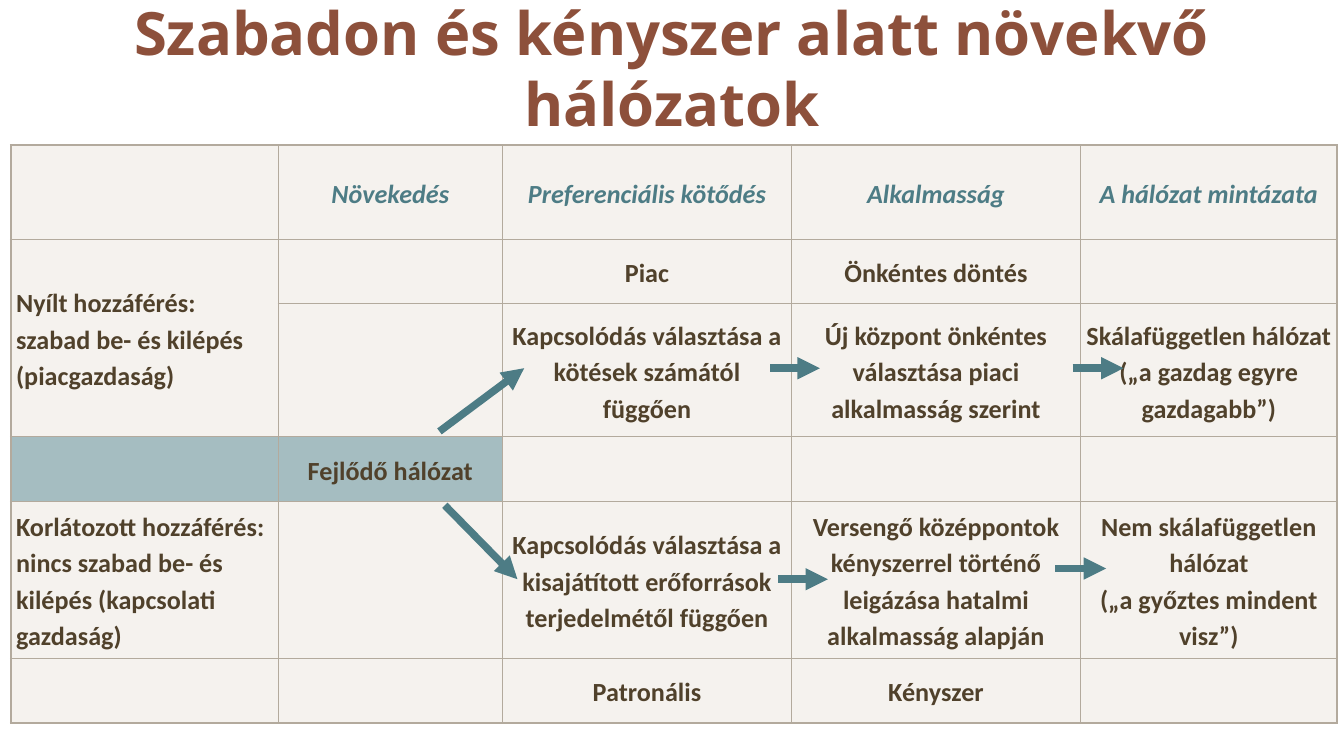
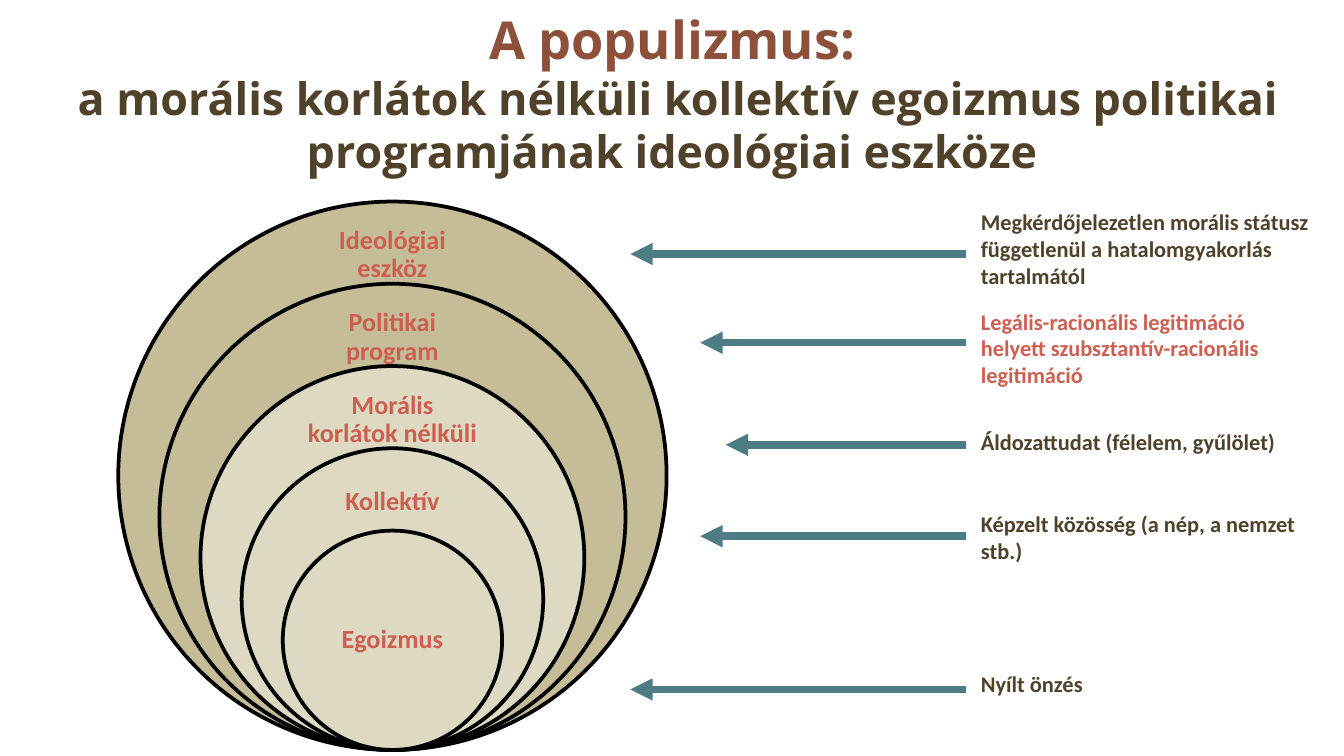
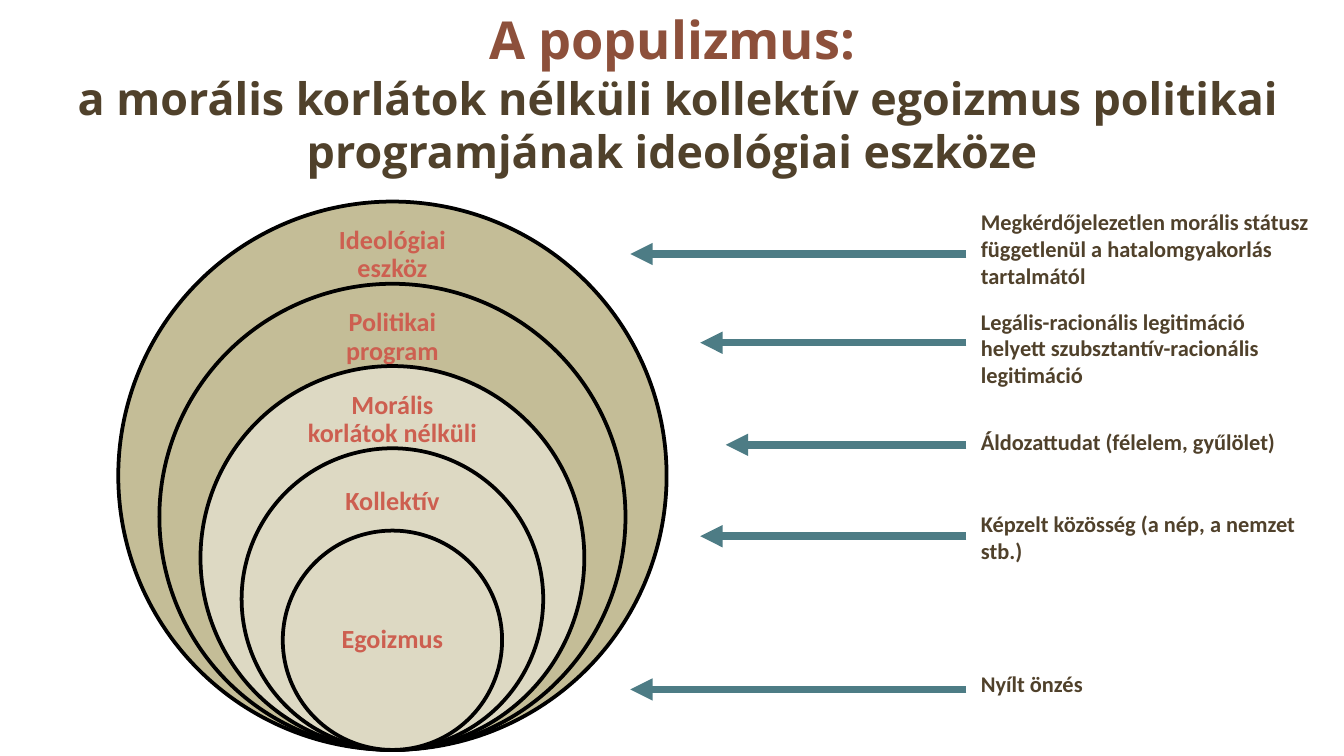
import pptx
import pptx.dml.color
import pptx.enum.shapes
import pptx.enum.text
import pptx.oxml
import pptx.oxml.ns
import pptx.util
from pptx.util import Inches

# Shared look
RUST, BROWN, TEAL, CORAL = "8D503B", "50412B", "4D7C85", "CD5F50"
SAND, TAUPE, KHAKI, CREAM, BLACK = "EFEAE4", "B3AA9D", "C4BD97", "DDD9C3", "000000"
TITLE_FONT, BODY_FONT = "Open Sans", "Calibri"
CENTER = pptx.enum.text.PP_ALIGN.CENTER
LEFT = pptx.enum.text.PP_ALIGN.LEFT
MIDDLE = pptx.enum.text.MSO_ANCHOR.MIDDLE
TOP = pptx.enum.text.MSO_ANCHOR.TOP

# Networks table
COLUMN_WIDTHS = [1.99, 1.67, 2.15, 2.15, 1.91]
ROW_HEIGHTS = [0.7, 0.48, 0.99, 0.48, 0.99, 0.48]
NETWORKS = [
    ["", "Növekedés", "Preferenciális kötődés", "Alkalmasság", "A hálózat mintázata"],
    ["Nyílt hozzáférés: szabad be- és kilépés (piacgazdaság)", "", "Piac",
     "Önkéntes döntés", ""],
    ["", "", "Kapcsolódás választása a kötések számától függően",
     "Új központ önkéntes választása piaci alkalmasság szerint",
     "Skálafüggetlen hálózat\n(„a gazdag egyre gazdagabb”)"],
    ["", "Fejlődő hálózat", "", "", ""],
    ["Korlátozott hozzáférés: nincs szabad be- és kilépés (kapcsolati gazdaság)", "",
     "Kapcsolódás választása a kisajátított erőforrások terjedelmétől függően",
     "Versengő középpontok kényszerrel történő leigázása hatalmi alkalmasság alapján",
     "Nem skálafüggetlen hálózat\n(„a győztes mindent visz”)"],
    ["", "", "Patronális", "Kényszer", ""],
]
# Arrow ends, measured from the corner of the table
NETWORK_ARROWS = [
    ((3.19, 2.13), (3.82, 1.66)), ((3.23, 2.68), (3.77, 3.23)),
    ((5.65, 1.66), (6.02, 1.66)), ((5.71, 3.23), (6.08, 3.23)),
    ((7.9, 1.66), (8.28, 1.66)), ((7.77, 3.15), (8.15, 3.15)),
]

# Populism: rings as (label, label width, fill), outermost first
RINGS = [
    ("Ideológiai eszköz", 1.53, KHAKI),
    ("Politikai program", 1.5, KHAKI),
    ("Morális korlátok nélküli", 1.48, CREAM),
    ("Kollektív", 1.21, CREAM),
    ("Egoizmus", 1.15, CREAM),
]
# Callouts as (text, top, height, arrow height, arrow tip)
CALLOUTS = [
    ("Megkérdőjelezetlen morális státusz függetlenül a hatalomgyakorlás tartalmától",
     0, 0.66, 0.39, 0),
    ("Legális-racionális legitimáció helyett szubsztantív-racionális legitimáció",
     0.74, 0.71, 1.05, 0.52),
    ("Áldozattudat (félelem, gyűlölet)", 1.64, 0.37, 1.81, 0.71),
    ("Képzelt közösség (a nép, a nemzet stb.)", 2.25, 0.53, 2.49, 0.52),
    ("Nyílt önzés", 3.44, 0.31, 3.63, 0),
]


def rgb(color):
    return pptx.dml.color.RGBColor.from_string(color)


def set_font(font, size, color, name=BODY_FONT, italic=False):
    font.name, font.size, font.bold = name, pptx.util.Pt(size), True
    font.italic = italic
    font.color.rgb = rgb(color)


def xml(tag, **attributes):
    element = pptx.oxml.parse_xml(f"<{tag} {pptx.oxml.ns.nsdecls('a')}/>")
    for key, value in attributes.items():
        element.set(key, str(value))
    return element


def add_title(slide, height, parts):
    """Each part is (text, size, color) and stands on a line of its own."""
    title = slide.shapes.title
    title.left, title.top = Inches(0.12), Inches(0)
    title.width, title.height = Inches(9.76), Inches(height)
    frame = title.text_frame
    frame.auto_size = pptx.enum.text.MSO_AUTO_SIZE.NONE
    frame.vertical_anchor = MIDDLE
    paragraph = frame.paragraphs[0]
    paragraph.alignment = CENTER
    for index, (text, size, color) in enumerate(parts):
        if index:
            paragraph.add_line_break()
            paragraph.space_after = pptx.util.Pt(24)
        run = paragraph.add_run()
        run.text = text
        set_font(run.font, size, color, TITLE_FONT)


def add_arrow(shapes, start, end):
    arrow = shapes.add_connector(pptx.enum.shapes.MSO_CONNECTOR.STRAIGHT,
                                 *(Inches(value) for value in (*start, *end)))
    arrow.line.color.rgb = rgb(TEAL)
    arrow.line.width = pptx.util.Pt(4)
    arrow.line._get_or_add_ln().append(xml("a:tailEnd", type="triangle"))
    arrow._element.spPr.append(xml("a:effectLst"))


def add_label(shapes, box, text, size, color, align=LEFT, anchor=TOP, inset=None,
              spacing=None):
    label = shapes.add_textbox(*(Inches(value) for value in box))
    frame = label.text_frame
    frame.word_wrap, frame.vertical_anchor = True, anchor
    if inset is not None:
        frame.margin_left = frame.margin_right = Inches(inset)
        frame.margin_top = frame.margin_bottom = Inches(inset)
    frame.text = text
    paragraph = frame.paragraphs[0]
    paragraph.alignment, paragraph.line_spacing = align, spacing
    set_font(paragraph.font, size, color)


def style_cell(cell, row, column):
    # Borders are heavier along the outside of the table
    outer = {"L": column == 0, "R": column == len(COLUMN_WIDTHS) - 1,
             "T": row == 0, "B": row == len(ROW_HEIGHTS) - 1}
    properties = cell._tc.get_or_add_tcPr()
    for side, heavy in outer.items():
        border = xml(f"a:ln{side}", w=pptx.util.Pt(1 if heavy else 0.5))
        fill = xml("a:solidFill")
        fill.append(xml("a:srgbClr", val=TAUPE))
        border.append(fill)
        properties.append(border)
    # The start of the process is tinted
    color, opacity = (TEAL, 50) if row == 3 and column < 2 else (SAND, 60)
    cell.fill.solid()
    cell.fill.fore_color.rgb = rgb(color)
    tint = properties.find(pptx.oxml.ns.qn("a:solidFill"))[0]
    tint.append(xml("a:alpha", val=opacity * 1000))
    # Text
    cell.vertical_anchor = MIDDLE
    cell.margin_left = cell.margin_right = Inches(0.04)
    cell.margin_top = cell.margin_bottom = Inches(0.04)
    if NETWORKS[row][column]:
        cell.text = NETWORKS[row][column]
        for paragraph in cell.text_frame.paragraphs:
            paragraph.alignment = CENTER if column else LEFT
            paragraph.line_spacing = 1.15
            set_font(paragraph.font, 14, BROWN if row else TEAL, italic=row == 0)


def add_networks(slide, left, top, width, height):
    frame = slide.shapes.add_table(
        len(ROW_HEIGHTS), len(COLUMN_WIDTHS), Inches(left), Inches(top),
        Inches(width), Inches(height))
    table = frame.table
    table.first_row = table.horz_banding = False
    for column, column_width in zip(table.columns, COLUMN_WIDTHS):
        column.width = Inches(column_width)
    for row, row_height in zip(table.rows, ROW_HEIGHTS):
        row.height = Inches(row_height)
    frame.width, frame.height = Inches(width), Inches(height)
    for row in range(len(ROW_HEIGHTS)):
        for column in range(len(COLUMN_WIDTHS)):
            style_cell(table.cell(row, column), row, column)
    table.cell(1, 0).merge(table.cell(2, 0))
    for ends in NETWORK_ARROWS:
        add_arrow(slide.shapes, *((left + x, top + y) for x, y in ends))


def add_callouts(slide, left, top, highlighted):
    shapes = slide.shapes.add_group_shape().shapes
    for _, _, _, arrow_y, tip in CALLOUTS:
        add_arrow(shapes, (left + 2.5, top + arrow_y), (left + tip, top + arrow_y))
    for index, (text, offset, height, _, _) in enumerate(CALLOUTS):
        add_label(shapes, (left + 2.51, top + offset, 2.68, height), text, 12,
                  CORAL if index == highlighted else BROWN)


def add_rings(slide, left, top, size):
    """Circles that shrink by equal steps and touch at the bottom."""
    shapes = slide.shapes.add_group_shape().shapes
    middle, bottom = left + size / 2, top + size
    for index, (text, width, color) in enumerate(RINGS):
        diameter = size * (1 - 0.15 * index)
        ring_top = bottom - diameter
        ring = shapes.add_shape(
            pptx.enum.shapes.MSO_SHAPE.OVAL, Inches(middle - diameter / 2),
            Inches(ring_top), Inches(diameter), Inches(diameter))
        ring.shadow.inherit = False
        ring.fill.solid()
        ring.fill.fore_color.rgb = rgb(color)
        ring.line.color.rgb = rgb(BLACK)
        ring.line.width = pptx.util.Pt(2)
        innermost = index == len(RINGS) - 1
        offset, height = (diameter / 4, diameter / 2) if innermost else (0.2, 0.4)
        add_label(shapes, (middle - width / 2, ring_top + offset, width, height),
                  text, 14, CORAL, CENTER, MIDDLE, inset=0.11, spacing=0.9)


def add_networks_slide(slide):
    add_title(slide, 1, [("Szabadon és kényszer alatt növekvő hálózatok", 32, RUST)])
    add_networks(slide, 0.08, 1.08, 9.88, 4.27)


def add_populism_slide(slide, highlighted=None):
    add_title(slide, 1.38, [
        ("A populizmus:", 28, RUST),
        (" a morális korlátok nélküli kollektív egoizmus politikai programjának "
         "ideológiai eszköze", 24, BROWN)])
    add_callouts(slide, 4.69, 1.5, highlighted)
    add_rings(slide, 0.88, 1.5, 4.08)


def main():
    deck = pptx.Presentation()
    # Widescreen, 16 to 9
    deck.slide_width = Inches(10)
    deck.slide_height = deck.slide_width * 9 // 16
    title_only = deck.slide_layouts[5]
    add_networks_slide(deck.slides.add_slide(title_only))
    add_populism_slide(deck.slides.add_slide(title_only), highlighted=1)
    add_populism_slide(deck.slides.add_slide(title_only))
    deck.save("out.pptx")


if __name__ == "__main__":
    main()
